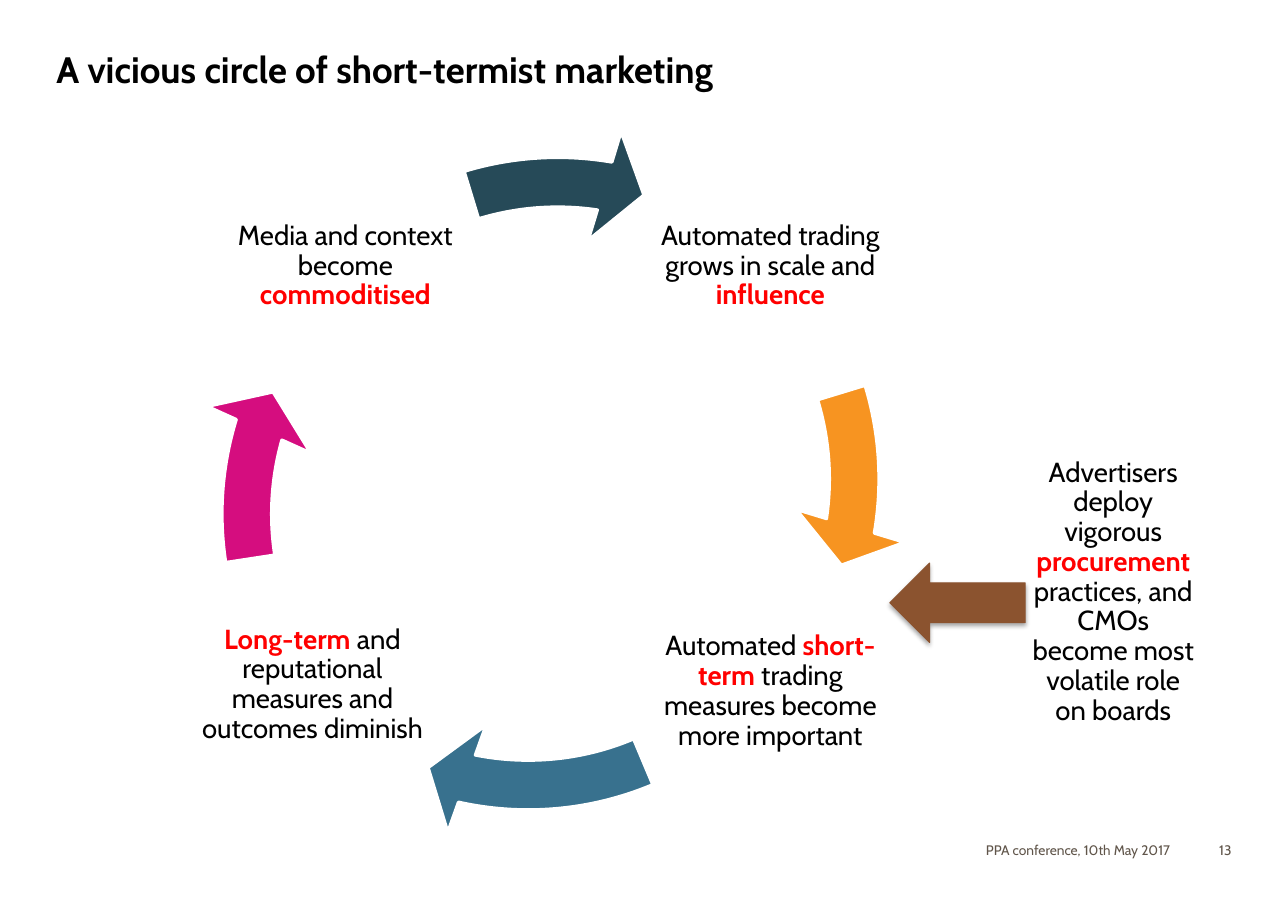
"""Build a slide showing the vicious circle of short-termist marketing."""
from lxml import etree
from pptx import Presentation
from pptx import util as u
from pptx.dml.color import RGBColor
from pptx.enum import shapes, text
from pptx.oxml import ns

BLACK = RGBColor(0x00, 0x00, 0x00)
WHITE = RGBColor(0xFF, 0xFF, 0xFF)
RED = RGBColor(0xFF, 0x00, 0x00)
TAUPE = RGBColor(0x60, 0x55, 0x4A)
ORANGE = RGBColor(0xF7, 0x94, 0x21)
BLUE = RGBColor(0x38, 0x71, 0x8E)
PINK = RGBColor(0xD5, 0x0D, 0x7F)
NAVY = RGBColor(0x26, 0x4A, 0x58)
BROWN = RGBColor(0x8B, 0x53, 0x2F)

FONT = "Cabin"
CIRCLE = 16.28

STAGES = [
    ((14.88, 3.25, 5.77, 5.77), "Automated trading grows in scale and *influence*"),
    ((14.88, 13.06, 5.77, 5.77),
     "Automated *short-term* trading measures become more important"),
    ((4.55, 12.9, 5.31, 5.77),
     "*Long-term* and reputational measures and outcomes diminish"),
    ((5.08, 3.25, 5.77, 5.77), "Media and context become *commoditised*"),
    ((23.65, 10.46, 4.04, 6.38),
     "Advertisers deploy vigorous *procurement* practices, "
     "and CMOs become most volatile role on boards"),
]

ARCS = [
    (4.72, 2.9, 5.48, 205.86, ORANGE),
    (4.04, 3.12, 61.16, 40.31, BLUE),
    (4.39, 3.71, 117.91, 102.8, PINK),
    (4.72, 2.9, 167.48, 151.86, NAVY),
]


def add_text(slide, box, content, size=18, color=BLACK, bold=False,
             align=text.PP_ALIGN.LEFT, anchor=text.MSO_ANCHOR.TOP,
             inset=0, spacing=1.0):
    """Add a text box; words between asterisks become bold red."""
    tf = slide.shapes.add_textbox(*map(u.Cm, box)).text_frame
    tf.word_wrap = True
    tf.vertical_anchor = anchor
    tf.margin_left = tf.margin_right = u.Cm(inset)
    tf.margin_top = tf.margin_bottom = u.Cm(inset)
    p = tf.paragraphs[0]
    p.alignment = align
    p.line_spacing = spacing
    for i, part in enumerate(content.split("*")):
        if part:
            marked = i % 2 == 1
            r = p.add_run()
            r.text = part
            r.font.name = FONT
            r.font.size = u.Pt(size)
            r.font.bold = bold or marked
            r.font.color.rgb = RED if marked else color


def add_stage(slide, box, content):
    """Add a centred statement about one stage."""
    add_text(slide, box, content, align=text.PP_ALIGN.CENTER,
             anchor=text.MSO_ANCHOR.MIDDLE, inset=0.08, spacing=0.9)


def add_arrow(slide, kind, box, fill, line, width):
    """Add a filled and outlined arrow without a shadow."""
    sp = slide.shapes.add_shape(kind, *map(u.Cm, box))
    sp.shadow.inherit = False
    sp.fill.solid()
    sp.fill.fore_color.rgb = fill
    sp.line.color.rgb = line
    sp.line.width = u.Pt(width)
    return sp


def add_arc(slide, left, top, end, start, color):
    """Add one curved arrow of the circle."""
    sp = add_arrow(slide, shapes.MSO_SHAPE.CIRCULAR_ARROW,
                   (left, top, CIRCLE, CIRCLE), color, WHITE, 2)
    for i, value in enumerate((0.07, 4.66, end, start, 0.08)):
        sp.adjustments[i] = value


def add_shadow(sp):
    """Give a shape a soft shadow straight below it."""
    effects = sp._element.spPr.find(ns.qn("a:effectLst"))
    shadow = etree.SubElement(
        effects, ns.qn("a:outerShdw"), blurRad=str(u.Pt(3.1)),
        dist=str(u.Pt(1.8)), dir="5400000", rotWithShape="0")
    color = etree.SubElement(shadow, ns.qn("a:srgbClr"), val=str(BLACK))
    etree.SubElement(color, ns.qn("a:alpha"), val="35000")


def main():
    """Build and save the slide."""
    prs = Presentation()
    prs.slide_width, prs.slide_height = u.Cm(29.7), u.Cm(21)
    s = prs.slides.add_slide(prs.slide_layouts[6])
    add_text(s, (1.3, 1.09, 27.1, 1.78),
             "A vicious circle of short-termist marketing", size=24, bold=True)
    for box, content in STAGES:
        add_stage(s, box, content)
    for arc in ARCS:
        add_arc(s, *arc)
    for box, content in (
        ((10.29, 19.41, 16.69, 0.99), "PPA conference, 10th May 2017"),
        ((23.65, 19.41, 4.75, 0.99), "13"),
    ):
        add_text(s, box, content, size=9, color=TAUPE, align=text.PP_ALIGN.RIGHT)
    add_shadow(add_arrow(s, shapes.MSO_SHAPE.LEFT_ARROW,
                         (20.52, 12.98, 3.12, 1.83), BROWN, BROWN, 0.75))
    prs.save("out.pptx")


if __name__ == "__main__":
    main()
